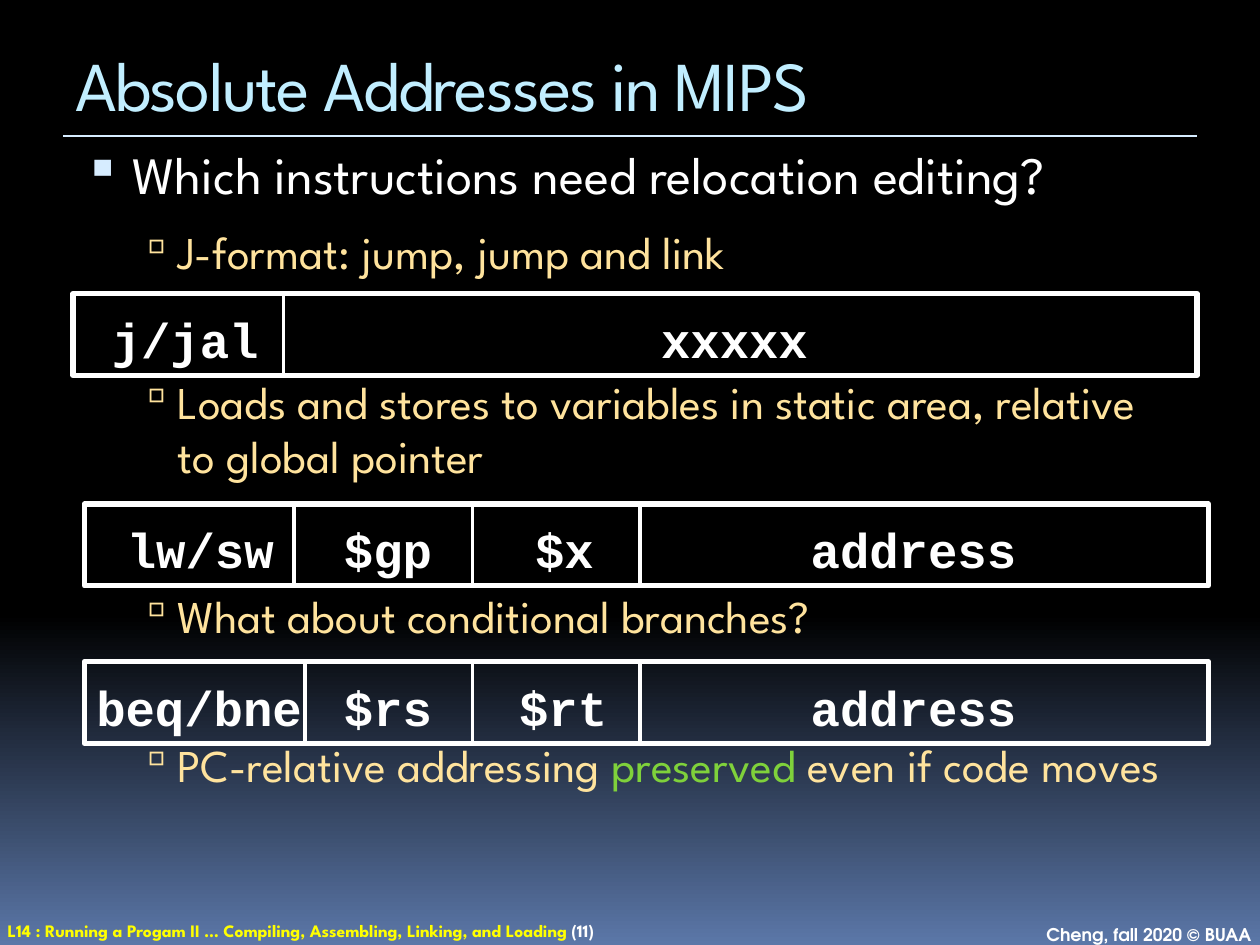
from copy import deepcopy
from dataclasses import dataclass

from lxml.etree import SubElement
from pptx import Presentation
from pptx.dml.color import RGBColor
from pptx.enum.shapes import MSO_CONNECTOR, MSO_SHAPE
from pptx.enum.text import MSO_ANCHOR, PP_ALIGN
from pptx.oxml.ns import qn
from pptx.util import Inches, Pt


@dataclass(frozen=True)
class Theme:
    heading: str = "League Spartan"
    credit: str = "TeX Gyre Adventor"
    code: str = "Courier New"
    white: str = "FFFFFF"
    title: str = "C1EEFF"
    rule: str = "D6ECFF"
    detail: str = "FFE39D"
    accent: str = "7FD13B"
    footer: str = "FFFF00"
    title_size: int = 40
    question_size: int = 30
    detail_size: int = 26
    code_size: int = 28
    footer_size: int = 10


THEME = Theme()
BACKGROUND = [(0, "000000"), (0.65, "000000"), (1, "5B77A8")]

TITLE = "Absolute Addresses in MIPS"
QUESTION = "Which instructions need relocation editing?"
DETAILS = [
    (5, [("J-format: jump, jump and link", THEME.detail)]),
    (48, [("Loads and stores to variables in static area, relative to global pointer", THEME.detail)]),
    (54, [("What about conditional branches?", THEME.detail)]),
    (48, [("PC-relative addressing ", THEME.detail), ("preserved ", THEME.accent),
          ("even if code moves", THEME.detail)]),
]
LESSON = [("L14 : Running a Progam II … Compiling, Assembling, Linking, and Loading ", THEME.footer),
          ("(11)", THEME.white)]
CREDIT = "Cheng, fall 2020 © BUAA"

FORMATS = [
    {"left": 0.58, "top": 2.33, "dividers": [2.25],
     "fields": [("j/jal", 1.47), ("xxxxx", 5.83)]},
    {"left": 0.67, "top": 4, "dividers": [2.33, 3.75, 5.08],
     "fields": [("lw/sw", 1.59), ("$gp", 3.08), ("$x", 4.48), ("address", 7.25)]},
    {"left": 0.67, "top": 5.25, "dividers": [2.42, 3.75, 5.08],
     "fields": [("beq/bne", 1.58), ("$rs", 3.08), ("$rt", 4.47), ("address", 7.25)]},
]
FORMAT_WIDTH, FORMAT_HEIGHT = 8.92, 0.65
FIELD_WIDTH, FIELD_HEIGHT = 1.84, 0.72


def write(paragraph, text, *, size, color=THEME.white, font=THEME.heading, bold=False,
          align=PP_ALIGN.LEFT, before=0, after=0, tracking=None):
    """Write a string or (string, colour) pieces with one format."""
    paragraph.alignment = align
    paragraph.space_before, paragraph.space_after = Pt(before), Pt(after)
    for piece, piece_color in [(text, color)] if isinstance(text, str) else text:
        run = paragraph.add_run()
        run.text = piece
        run.font.name, run.font.size, run.font.bold = font, Pt(size), bold
        run.font.color.rgb = RGBColor.from_string(piece_color)
        if tracking:
            run.font._element.set("spc", str(tracking))


def add_frame(shapes, left, top, width, height, anchor=MSO_ANCHOR.TOP, wrap=True, insets=None):
    """Add a text box and return its text frame."""
    frame = shapes.add_textbox(Inches(left), Inches(top), Inches(width), Inches(height)).text_frame
    frame.word_wrap, frame.vertical_anchor = wrap, anchor
    if insets:
        frame.margin_left = frame.margin_right = Inches(insets[0])
        frame.margin_top = frame.margin_bottom = Inches(insets[1])
    return frame


def add_bullet(paragraph, mark, color, percent, indent, hanging):
    """Give a paragraph a hanging bullet."""
    properties = paragraph._p.get_or_add_pPr()
    properties.set("marL", str(Inches(indent)))
    properties.set("indent", str(-Inches(hanging)))
    SubElement(SubElement(properties, qn("a:buClr")), qn("a:srgbClr")).set("val", color)
    SubElement(properties, qn("a:buSzPct")).set("val", str(percent * 1000))
    SubElement(properties, qn("a:buChar")).set("char", mark)


def add_line(shapes, start, end, color, width):
    """Draw a straight line without a shadow."""
    line = shapes.add_connector(MSO_CONNECTOR.STRAIGHT, *map(Inches, start + end))
    line.line.color.rgb = RGBColor.from_string(color)
    line.line.width = Pt(width)
    SubElement(line._element.spPr, qn("a:effectLst"))


def add_format(slide, left, top, dividers, fields):
    """Draw one instruction format as a group of fields."""
    shapes = slide.shapes.add_group_shape().shapes
    for field, center in fields:
        frame = add_frame(shapes, center - FIELD_WIDTH / 2, top, FIELD_WIDTH, FIELD_HEIGHT,
                          MSO_ANCHOR.MIDDLE, wrap=False)
        write(frame.paragraphs[0], field, size=THEME.code_size, font=THEME.code, bold=True,
              align=PP_ALIGN.CENTER)
    border = shapes.add_shape(MSO_SHAPE.RECTANGLE, Inches(left), Inches(top),
                              Inches(FORMAT_WIDTH), Inches(FORMAT_HEIGHT))
    border.shadow.inherit = False
    border.fill.background()
    border.line.color.rgb = RGBColor.from_string(THEME.white)
    border.line.width = Pt(3)
    for x in dividers:
        add_line(shapes, (x, top), (x, top + FORMAT_HEIGHT), THEME.white, 2.25)


def paint_background(slide):
    """Fill the background with the vertical gradient."""
    fill = slide.background.fill
    fill.gradient()
    fill.gradient_angle = 270
    stops = slide.element.find(".//" + qn("a:gsLst"))
    stops.append(deepcopy(stops[-1]))
    for stop, (position, color) in zip(fill.gradient_stops, BACKGROUND):
        stop.position = position
        stop.color.rgb = RGBColor.from_string(color)


def main():
    """Build and save the slide."""
    deck = Presentation()
    deck.slide_width, deck.slide_height = Inches(10), Inches(7.5)
    slide = deck.slides.add_slide(deck.slide_layouts[6])
    shapes = slide.shapes
    paint_background(slide)

    add_line(shapes, (0.5, 1.08), (9.5, 1.08), THEME.rule, 1.5)
    lesson = add_frame(shapes, -0.01, 7.27, 5.42, 0.22, insets=(0.07, 0.03))
    write(lesson.paragraphs[0], LESSON, size=THEME.footer_size, bold=True)
    credit = add_frame(shapes, 7.56, 7.3, 2.44, 0.22, insets=(0.07, 0.03))
    write(credit.paragraphs[0], CREDIT, size=THEME.footer_size, font=THEME.credit, bold=True,
          align=PP_ALIGN.RIGHT)

    title = add_frame(shapes, 0.5, 0.25, 9, 0.83, MSO_ANCHOR.MIDDLE)
    write(title.paragraphs[0], TITLE, size=THEME.title_size, color=THEME.title, tracking=-100)

    body = add_frame(shapes, 0.5, 1.08, 9, 5.87)
    question = body.paragraphs[0]
    write(question, QUESTION, size=THEME.question_size, before=7, after=6)
    add_bullet(question, "▪", THEME.rule, 95, 0.45, 0.38)
    for before, text in DETAILS:
        detail = body.add_paragraph()
        write(detail, text, size=THEME.detail_size, before=before, after=6)
        add_bullet(detail, "▫", THEME.detail, 90, 0.81, 0.31)

    for instruction in FORMATS:
        add_format(slide, **instruction)
    deck.save("out.pptx")


if __name__ == "__main__":
    main()
